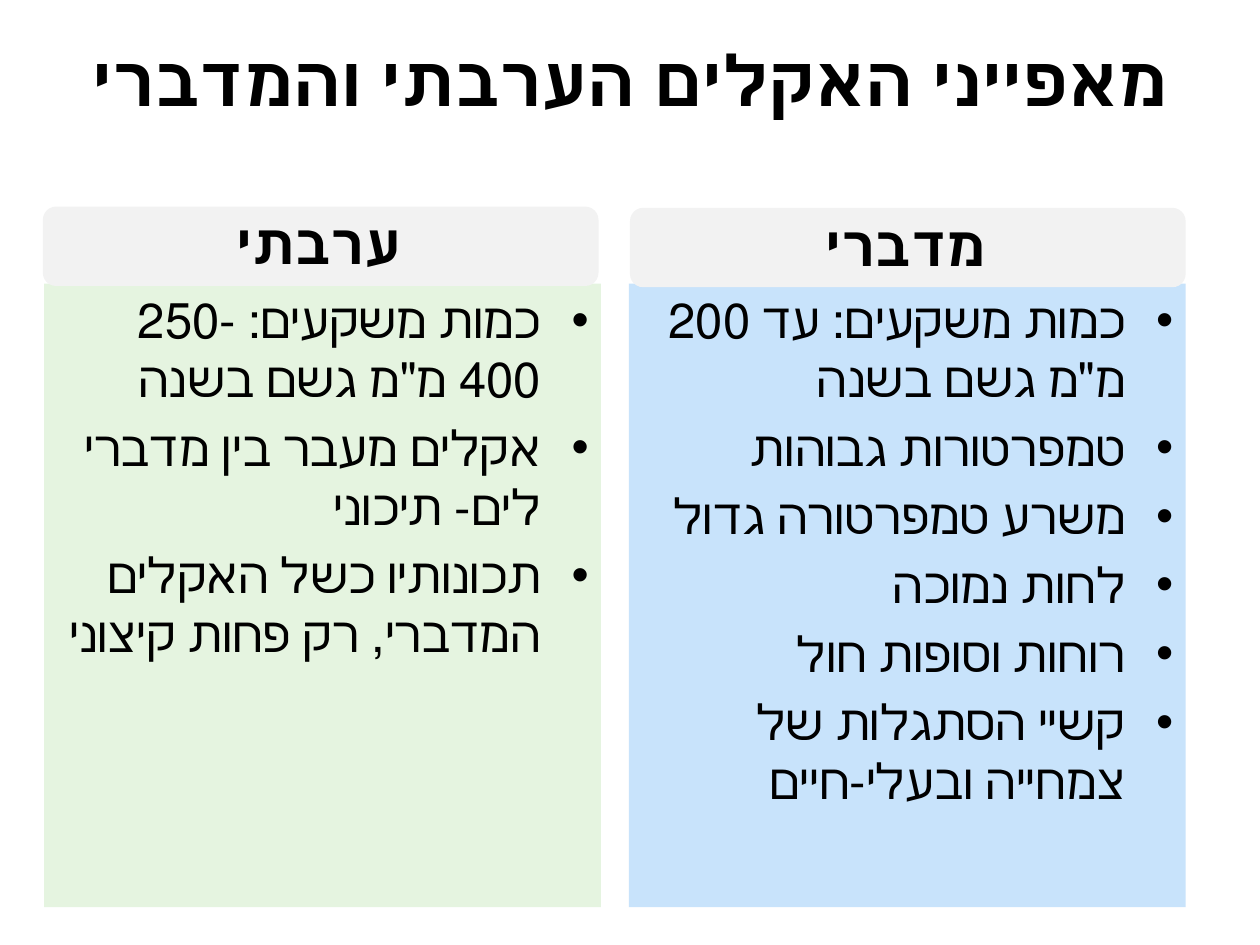
from lxml.etree import SubElement
from pptx import Presentation
from pptx.dml.color import RGBColor
from pptx.enum.shapes import MSO_SHAPE
from pptx.enum.text import MSO_ANCHOR, MSO_AUTO_SIZE, PP_ALIGN
from pptx.oxml.ns import qn
from pptx.util import Inches, Pt

COLORS = {
    "text": "000000",
    "header": "F2F2F2",
    "desert": "C8E3FB",
    "steppe": "E5F4E0",
}
TITLE = "מאפייני האקלים הערבתי והמדברי"
# heading, fill, panel left, header left, header top, bullet points
COLUMNS = [
    ("מדברי", "desert", 4.99, 5.0, 1.65, [
        'כמות משקעים: עד 200 מ"מ גשם בשנה',
        "טמפרטורות גבוהות",
        "משרע טמפרטורה גדול",
        "לחות נמוכה",
        "רוחות וסופות חול",
        "קשיי הסתגלות של צמחייה ובעלי-חיים",
    ]),
    ("ערבתי", "steppe", 0.35, 0.34, 1.64, [
        'כמות משקעים: 250-400 מ"מ גשם בשנה',
        "אקלים מעבר בין מדברי לים- תיכוני",
        "תכונותיו כשל האקלים המדברי, רק פחות קיצוני",
    ]),
]


class ClimateSlide:
    font_name = "Calibri"

    def __init__(self, slide):
        self.slide = slide

    def format_paragraph(self, paragraph, size, alignment, bold=False):
        """Style a right-to-left paragraph."""
        paragraph.alignment = alignment
        paragraph.font.name = self.font_name
        paragraph.font.size = Pt(size)
        paragraph.font.bold = bold
        paragraph.font.color.rgb = RGBColor.from_string(COLORS["text"])
        properties = paragraph._p.get_or_add_pPr()
        properties.set("rtl", "1")
        return properties

    def add_title(self, text):
        title = self.slide.shapes.title
        title.left, title.top = Inches(0.5), Inches(0)
        title.width, title.height = Inches(9), Inches(1.25)
        frame = title.text_frame
        frame.text = text
        frame.auto_size = MSO_AUTO_SIZE.NONE
        frame.vertical_anchor = MSO_ANCHOR.MIDDLE
        self.format_paragraph(frame.paragraphs[0], 40, PP_ALIGN.CENTER, bold=True)

    def add_block(self, kind, left, top, width, height, color):
        shape = self.slide.shapes.add_shape(
            kind, Inches(left), Inches(top), Inches(width), Inches(height))
        shape.shadow.inherit = False
        shape.fill.solid()
        shape.fill.fore_color.rgb = RGBColor.from_string(COLORS[color])
        shape.line.fill.background()
        return shape

    def add_bullet_panel(self, left, color, points):
        panel = self.add_block(MSO_SHAPE.RECTANGLE, left, 2.25, 4.42, 4.95, color)
        frame = panel.text_frame
        frame.word_wrap = True
        frame.vertical_anchor = MSO_ANCHOR.TOP
        frame.text = "\n".join(points)
        for paragraph in frame.paragraphs:
            paragraph.space_before = Pt(5.6)
            properties = self.format_paragraph(paragraph, 28, PP_ALIGN.RIGHT)
            indent = Inches(0.38)
            properties.set("marL", str(indent))
            properties.set("indent", str(-indent))
            bullet_font = SubElement(properties, qn("a:buFont"), typeface="Arial")
            bullet_font.addnext(SubElement(properties, qn("a:buChar"), char="•"))
            # Default run properties must follow the bullet settings.
            properties.append(properties.find(qn("a:defRPr")))

    def add_header(self, left, top, text):
        self.add_block(MSO_SHAPE.ROUNDED_RECTANGLE, left, top, 4.41, 0.63, "header")
        label = self.slide.shapes.add_textbox(
            Inches(left + 0.16), Inches(top - 0.03), Inches(4.06), Inches(0.64))
        frame = label.text_frame
        frame.word_wrap = True
        frame.auto_size = MSO_AUTO_SIZE.SHAPE_TO_FIT_TEXT
        frame.text = text
        self.format_paragraph(frame.paragraphs[0], 32, PP_ALIGN.CENTER, bold=True)


def main():
    presentation = Presentation()
    presentation.slide_width = Inches(10)
    presentation.slide_height = Inches(7.5)
    layout = presentation.slide_layouts.get_by_name("Title Only")
    climate = ClimateSlide(presentation.slides.add_slide(layout))
    climate.add_title(TITLE)
    for heading, color, left, header_left, header_top, points in COLUMNS:
        climate.add_bullet_panel(left, color, points)
        climate.add_header(header_left, header_top, heading)
    presentation.save("out.pptx")


if __name__ == "__main__":
    main()
